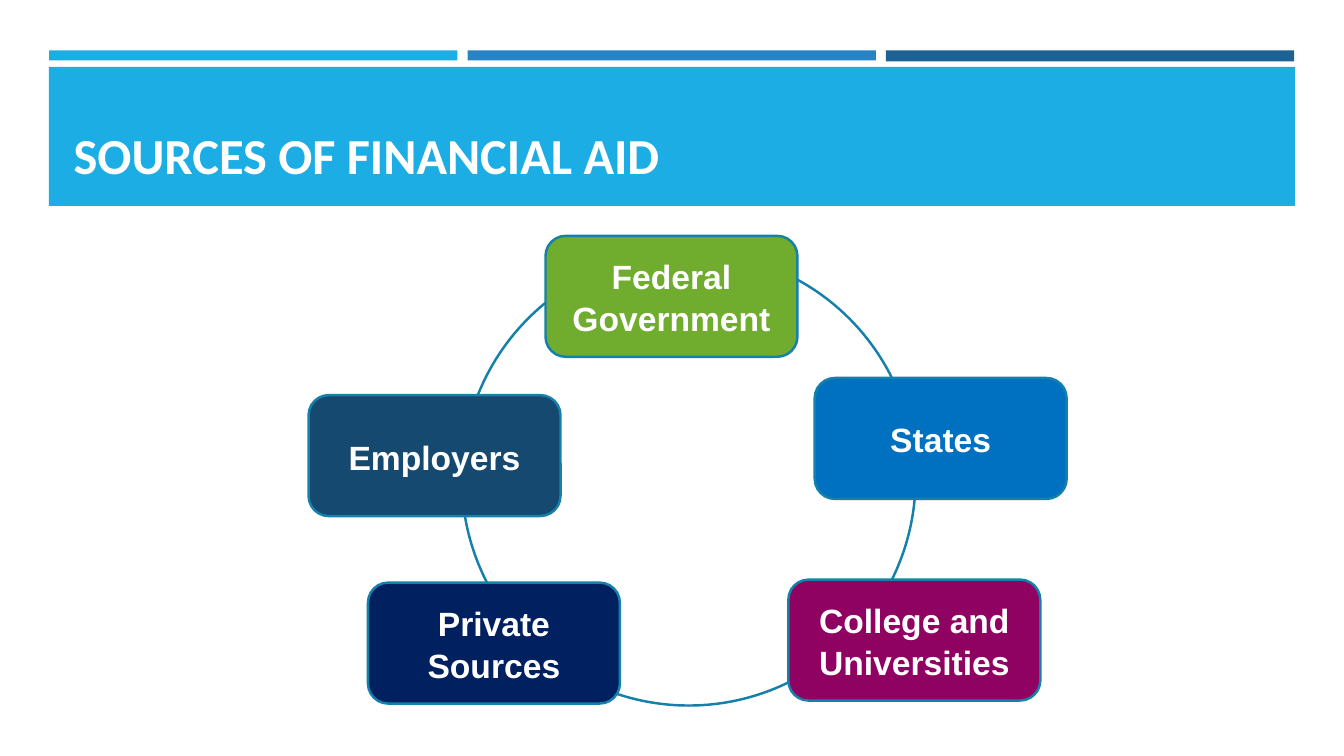
from dataclasses import dataclass

from lxml.etree import _Element as Element
from pptx import Presentation
from pptx.dml.color import RGBColor
from pptx.enum.shapes import MSO_SHAPE as Shape
from pptx.enum.text import MSO_ANCHOR as Anchor, MSO_AUTO_SIZE as AutoSize, PP_ALIGN as Align
from pptx.shapes.autoshape import Shape as AutoShape
from pptx.text.text import TextFrame
from pptx.util import Inches, Pt

WHITE = RGBColor(0xFF, 0xFF, 0xFF)
SKY = RGBColor(0x1C, 0xAD, 0xE4)
BLUE = RGBColor(0x26, 0x83, 0xC6)
DEEP_BLUE = RGBColor(0x1C, 0x62, 0x94)
OUTLINE = RGBColor(0x15, 0x80, 0xA9)
GREEN = RGBColor(0x70, 0xAC, 0x2E)
STATE_BLUE = RGBColor(0x00, 0x70, 0xC0)
MAGENTA = RGBColor(0x90, 0x02, 0x61)
NAVY = RGBColor(0x00, 0x20, 0x60)
SLATE = RGBColor(0x15, 0x49, 0x6F)

prs = Presentation()
prs.slide_width, prs.slide_height = Inches(13.33), Inches(7.5)
COL, ROW = prs.slide_width / 100, prs.slide_height / 100


@dataclass(frozen=True)
class Box:
    col: float
    row: float
    cols: float
    rows: float

    def place(self, sp: AutoShape) -> None:
        sp.left, sp.width = round(self.col * COL), round(self.cols * COL)
        sp.top, sp.height = round(self.row * ROW), round(self.rows * ROW)


@dataclass(frozen=True)
class Source:
    label: str
    col: float
    row: float
    color: RGBColor


SOURCE_COLS, SOURCE_ROWS = 18.75, 16
SOURCES = [
    Source("Federal Government", 40.59, 31.2, GREEN),
    Source("States", 60.62, 50, STATE_BLUE),
    Source("College and Universities", 58.66, 76.67, MAGENTA),
    Source("Private Sources", 27.38, 77.07, NAVY),
    Source("Employers", 22.96, 52.27, SLATE),
]
BAR_COL, BAR_PITCH, BAR_COLS = 3.66, 31.13, 30.38
BARS = [(SKY, 1.33), (BLUE, 1.33), (DEEP_BLUE, 1.47)]


def add_shape(kind: Shape, box: Box, fill: RGBColor | None, outlined: bool = False) -> AutoShape:
    sp = s.shapes.add_shape(kind, 0, 0, 0, 0)
    box.place(sp)
    sp.shadow.inherit = False
    if fill is None:
        sp.fill.background()
    else:
        sp.fill.solid()
        sp.fill.fore_color.rgb = fill
    if outlined:
        sp.line.color.rgb = OUTLINE
        sp.line.width = Pt(1.75)
    else:
        sp.line.fill.background()
    return sp


def set_text(tf: TextFrame, text: str, font: str, size: int, align: Align, anchor: Anchor) -> None:
    tf.text = text
    tf.word_wrap = True
    tf.auto_size = AutoSize.NONE
    tf.vertical_anchor = anchor
    p = tf.paragraphs[0]
    p.alignment = align
    r = p.runs[0]
    r.font.name, r.font.size, r.font.bold = font, Pt(size), True
    r.font.color.rgb = WHITE


def add_source(source: Source) -> None:
    box = Box(source.col, source.row, SOURCE_COLS, SOURCE_ROWS)
    sp = add_shape(Shape.ROUNDED_RECTANGLE, box, source.color, outlined=True)
    set_text(sp.text_frame, source.label, "Arial", 24, Align.CENTER, Anchor.MIDDLE)
    sp.text_frame.paragraphs[0].line_spacing = 1.05


def add_title(text: str, box: Box, behind: Element) -> None:
    title = s.shapes.title
    box.place(title)
    set_text(title.text_frame, text, "Calibri", 36, Align.LEFT, Anchor.BOTTOM)
    behind.addnext(title.element)


s = prs.slides.add_slide(prs.slide_layouts[5])
for i, (color, rows) in enumerate(BARS):
    add_shape(Shape.RECTANGLE, Box(BAR_COL + i * BAR_PITCH, 6.67, BAR_COLS, rows), color)
add_shape(Shape.RECTANGLE, Box(3.63, 8.85, 92.72, 18.4), SKY)
ring = add_shape(Shape.OVAL, Box(34.36, 33.33, 33.76, 60), None, outlined=True)
add_title("SOURCES OF FINANCIAL AID", Box(4.73, 10.67, 90.47, 14.4), ring.element)
for source in SOURCES:
    add_source(source)

prs.save("out.pptx")
